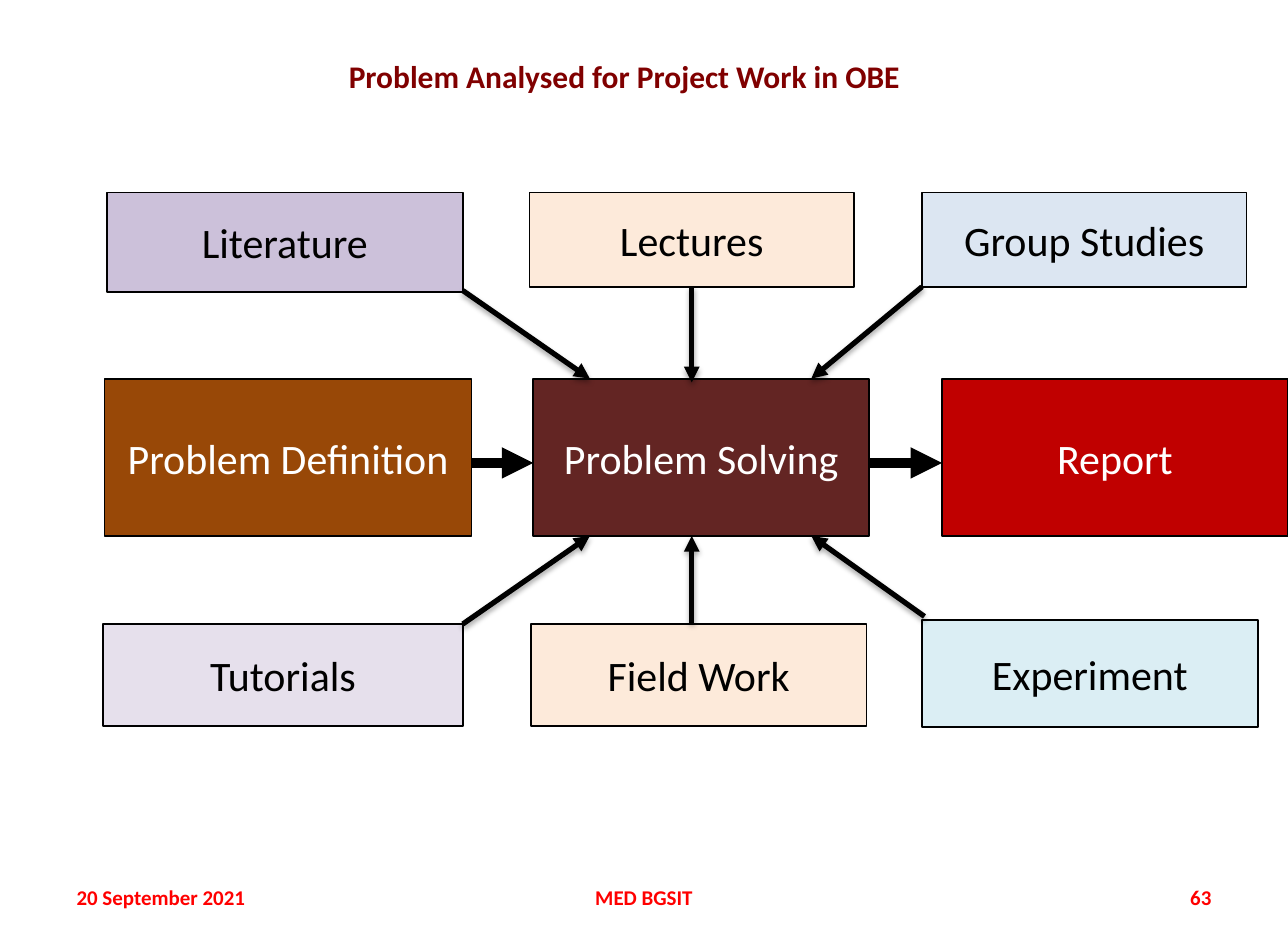
from lxml.etree import SubElement
from pptx import Presentation
from pptx.dml.color import RGBColor
from pptx.enum.shapes import MSO_CONNECTOR, MSO_SHAPE
from pptx.enum.text import MSO_ANCHOR, MSO_AUTO_SIZE, PP_ALIGN
from pptx.oxml.ns import qn
from pptx.util import Inches, Pt

BLACK, WHITE = "000000", "FFFFFF"

# Text, left, top, width, height, fill, text colour
BOXES = [
    ("Literature", 0.85, 1.53, 2.83, 0.79, "CCC1DA", BLACK),
    ("Lectures", 4.21, 1.53, 2.58, 0.75, "FDEADA", BLACK),
    ("Group Studies", 7.33, 1.53, 2.58, 0.75, "DCE6F2", BLACK),
    ("Problem Definition", 0.83, 3.01, 2.92, 1.25, "984807", WHITE),
    ("Problem Solving", 4.24, 3.01, 2.67, 1.25, "632523", WHITE),
    ("Report", 7.49, 3.01, 2.75, 1.25, "C00000", WHITE),
    ("Tutorials", 0.82, 4.96, 2.86, 0.81, "E6E0EC", BLACK),
    ("Field Work", 4.22, 4.96, 2.67, 0.81, "FDEADA", BLACK),
    ("Experiment", 7.33, 4.93, 2.67, 0.85, "DBEEF4", BLACK),
]
# Start x, start y, end x, end y
FLOW_ARROWS = [(3.74, 3.68, 4.24, 3.68), (6.91, 3.68, 7.49, 3.68)]
INPUT_ARROWS = [
    (3.68, 2.31, 4.69, 3.01),
    (5.5, 2.28, 5.5, 3.04),
    (7.33, 2.28, 6.45, 3.01),
    (5.5, 4.95, 5.5, 4.26),
    (3.68, 4.96, 4.69, 4.26),
    (7.35, 4.9, 6.45, 4.26),
]
# Text, left, width, alignment
FOOTERS = [
    ("20 September 2021", 0.51, 2.39, PP_ALIGN.LEFT),
    ("MED BGSIT", 3.5, 3.24, PP_ALIGN.CENTER),
    ("63", 7.34, 2.39, PP_ALIGN.RIGHT),
]


def color(value):
    return RGBColor.from_string(value)


def write(shape, text, size=24, fill=BLACK, bold=False, align=PP_ALIGN.CENTER,
          anchor=MSO_ANCHOR.MIDDLE, wrap=True):
    frame = shape.text_frame
    frame.text = text
    frame.auto_size = MSO_AUTO_SIZE.NONE
    frame.word_wrap = wrap
    frame.vertical_anchor = anchor
    paragraph = frame.paragraphs[0]
    paragraph.alignment = align
    font = paragraph.runs[0].font
    font.name, font.size, font.bold = "Calibri", Pt(size), bold
    font.color.rgb = color(fill)


def add_title(slide, text):
    title = slide.shapes.title
    title.left, title.top = Inches(0.13), Inches(0.4)
    title.width, title.height = Inches(9.67), Inches(0.4)
    write(title, text, size=18, fill="800000", bold=True, anchor=MSO_ANCHOR.TOP)


def add_box(slide, text, left, top, width, height, fill, text_color):
    box = slide.shapes.add_shape(MSO_SHAPE.RECTANGLE, Inches(left), Inches(top),
                                 Inches(width), Inches(height))
    box.shadow.inherit = False
    box.fill.solid()
    box.fill.fore_color.rgb = color(fill)
    box.line.color.rgb = color(BLACK)
    box.line.width = Pt(1)
    write(box, text, fill=text_color, wrap=False)


def add_arrow(slide, x1, y1, x2, y2, width, shadow=False):
    arrow = slide.shapes.add_connector(MSO_CONNECTOR.STRAIGHT, Inches(x1), Inches(y1),
                                       Inches(x2), Inches(y2))
    arrow.line.color.rgb = color(BLACK)
    arrow.line.width = Pt(width)
    properties = arrow._element.spPr
    SubElement(properties.find(qn("a:ln")), qn("a:tailEnd"), type="triangle")
    effects = SubElement(properties, qn("a:effectLst"))
    if shadow:
        outer = SubElement(effects, qn("a:outerShdw"), blurRad="40000", dist="23000",
                           dir="5400000", rotWithShape="0")
        tint = SubElement(outer, qn("a:srgbClr"), val=BLACK)
        SubElement(tint, qn("a:alpha"), val="35000")


def add_footer(slide, text, left, width, align):
    footer = slide.shapes.add_textbox(Inches(left), Inches(6.93), Inches(width), Inches(0.4))
    write(footer, text, size=12, fill="FF0000", bold=True, align=align)


def main():
    presentation = Presentation()
    presentation.slide_width, presentation.slide_height = Inches(10.24), Inches(7.48)
    slide = presentation.slides.add_slide(presentation.slide_layouts[5])
    add_title(slide, "Problem Analysed for Project Work in OBE")

    # Main flow arrows lie behind the boxes, input arrows in front
    for points in FLOW_ARROWS:
        add_arrow(slide, *points, width=6)
    for box in BOXES:
        add_box(slide, *box)
    for points in INPUT_ARROWS:
        add_arrow(slide, *points, width=3, shadow=True)

    # Date, department and slide number
    for footer in FOOTERS:
        add_footer(slide, *footer)
    presentation.save("out.pptx")


if __name__ == "__main__":
    main()
